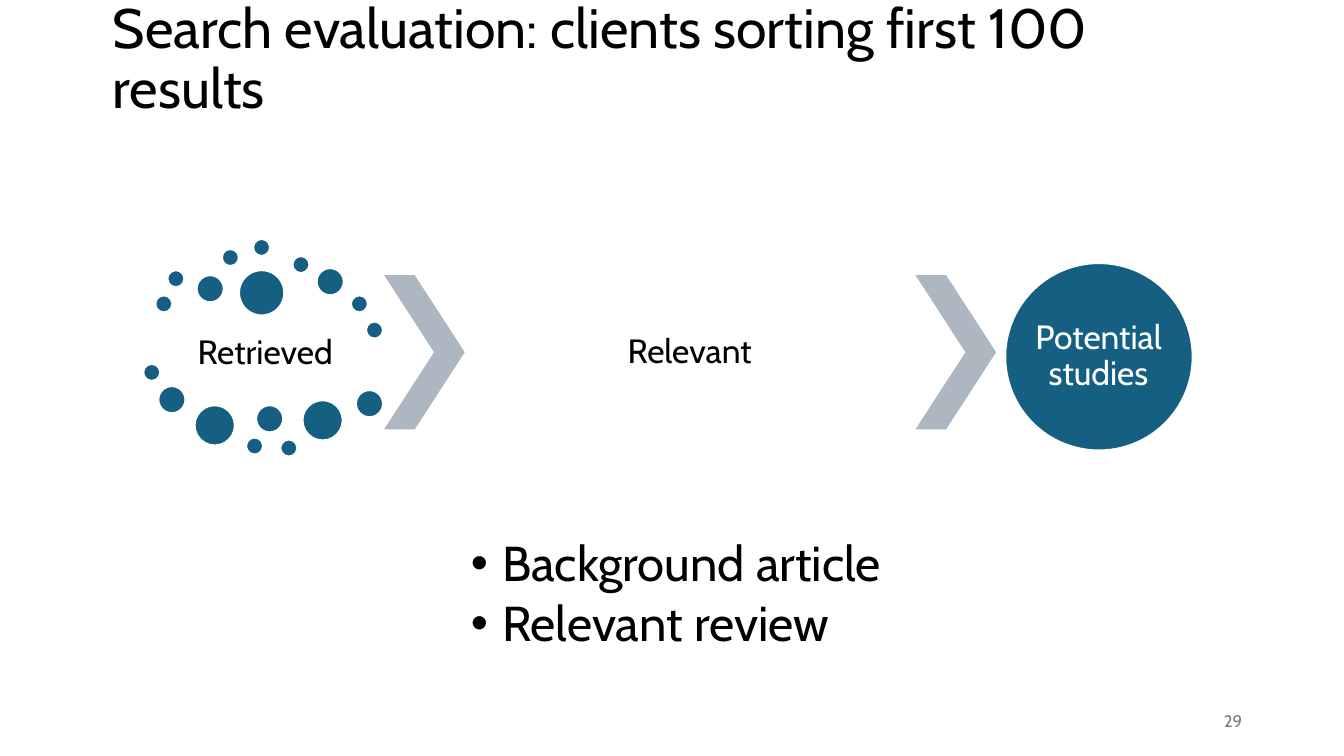
"""Builds the search evaluation slide: retrieved, relevant, potential studies."""
from lxml import etree
from pptx import Presentation
from pptx import util as u
from pptx.dml.color import RGBColor
from pptx.enum import shapes, text
from pptx.oxml import ns

COLOURS = {"ink": "000000", "white": "FFFFFF", "blue": "156082",
           "grey": "ACB7C1", "muted": "797979"}
SMALL, MEDIUM, LARGE, LARGEST = 17, 27, 40, 45
RETRIEVED_DOTS = {
    SMALL: [(154, 293), (166, 268), (220, 247), (251, 237), (290, 254),
            (348, 293), (363, 319), (142, 361), (244, 434), (278, 436)],
    MEDIUM: [(195, 273), (314, 266), (157, 383), (254, 402), (353, 387)],
    LARGE: [(193, 402), (300, 397)],
    LARGEST: [(237, 268)],
}
CHEVRON_LEFTS = (381, 908)


class SlideBuilder:
    """Holds the style and the current slide."""

    font = "Cabin"
    px = u.Inches(1) // 100

    def __init__(self, width, height):
        self.deck = Presentation()
        self.deck.slide_width = width * self.px
        self.deck.slide_height = height * self.px
        self.slide = self.deck.slides.add_slide(self.deck.slide_layouts[6])

    def box(self, *place):
        return [length * self.px for length in place]

    def colour(self, name):
        return RGBColor.from_string(COLOURS[name])

    def words(self, lines, place, size, colour="ink", align="LEFT",
              anchor="MIDDLE", inset=(3, 3), spacing=0.9):
        frame = self.slide.shapes.add_textbox(*self.box(*place)).text_frame
        frame.word_wrap = True
        frame.vertical_anchor = getattr(text.MSO_ANCHOR, anchor)
        frame.margin_left = frame.margin_right = inset[0] * self.px
        frame.margin_top = frame.margin_bottom = inset[1] * self.px
        frame.text = lines
        for paragraph in frame.paragraphs:
            paragraph.alignment = getattr(text.PP_ALIGN, align)
            paragraph.line_spacing = spacing
            for run in paragraph.runs:
                run.font.name = self.font
                run.font.size = u.Pt(size)
                run.font.color.rgb = self.colour(colour)
        return frame

    def bullets(self, lines, place, size, indent):
        frame = self.words(lines, place, size, anchor="TOP", inset=(6, 6))
        for paragraph in frame.paragraphs:
            paragraph.space_after = u.Pt(5)
            props = paragraph._p.get_or_add_pPr()
            props.set("marL", str(indent * self.px))
            props.set("indent", str(-indent * self.px))
            etree.SubElement(props, ns.qn("a:buFont"), typeface="Arial")
            etree.SubElement(props, ns.qn("a:buChar"), char="•")

    def shape(self, kind, place, fill):
        shape = self.slide.shapes.add_shape(kind, *self.box(*place))
        shape.shadow.inherit = False
        shape.fill.solid()
        shape.fill.fore_color.rgb = self.colour(fill)
        return shape

    def circle(self, left, top, size):
        circle = self.shape(shapes.MSO_SHAPE.OVAL, (left, top, size, size), "blue")
        circle.line.color.rgb = self.colour("white")
        circle.line.width = u.Pt(1.5)

    def chevron(self, left, top, width, height):
        chevron = self.shape(shapes.MSO_SHAPE.CHEVRON, (left, top, width, height), "grey")
        chevron.adjustments[0] = 0.62
        chevron.line.fill.background()


def main():
    """Draws the slide and saves it."""
    page = SlideBuilder(1333, 750)
    page.words("Search evaluation: clients sorting first 100 results",
               (102, 15, 1130, 90), 39.6, inset=(10, 5))
    page.words("29", (942, 695, 300, 40), 12, "muted", "RIGHT",
               inset=(10, 5), spacing=1.0)

    page.words("Retrieved", (154, 315, 218, 72), 24, align="CENTER")
    for size, corners in RETRIEVED_DOTS.items():
        for left, top in corners:
            page.circle(left, top, size)

    for left in CHEVRON_LEFTS:
        page.chevron(left, 273, 80, 153)

    page.words("Relevant", (575, 273, 218, 153), 24, align="CENTER")
    page.bullets("Background article\nRelevant review", (461, 529, 448, 135), 35, 31)

    page.circle(997, 261, 186)
    page.words("Potential studies", (1024, 288, 131, 131), 24, "white", "CENTER",
               inset=(0, 0))
    page.deck.save("out.pptx")


if __name__ == "__main__":
    main()
